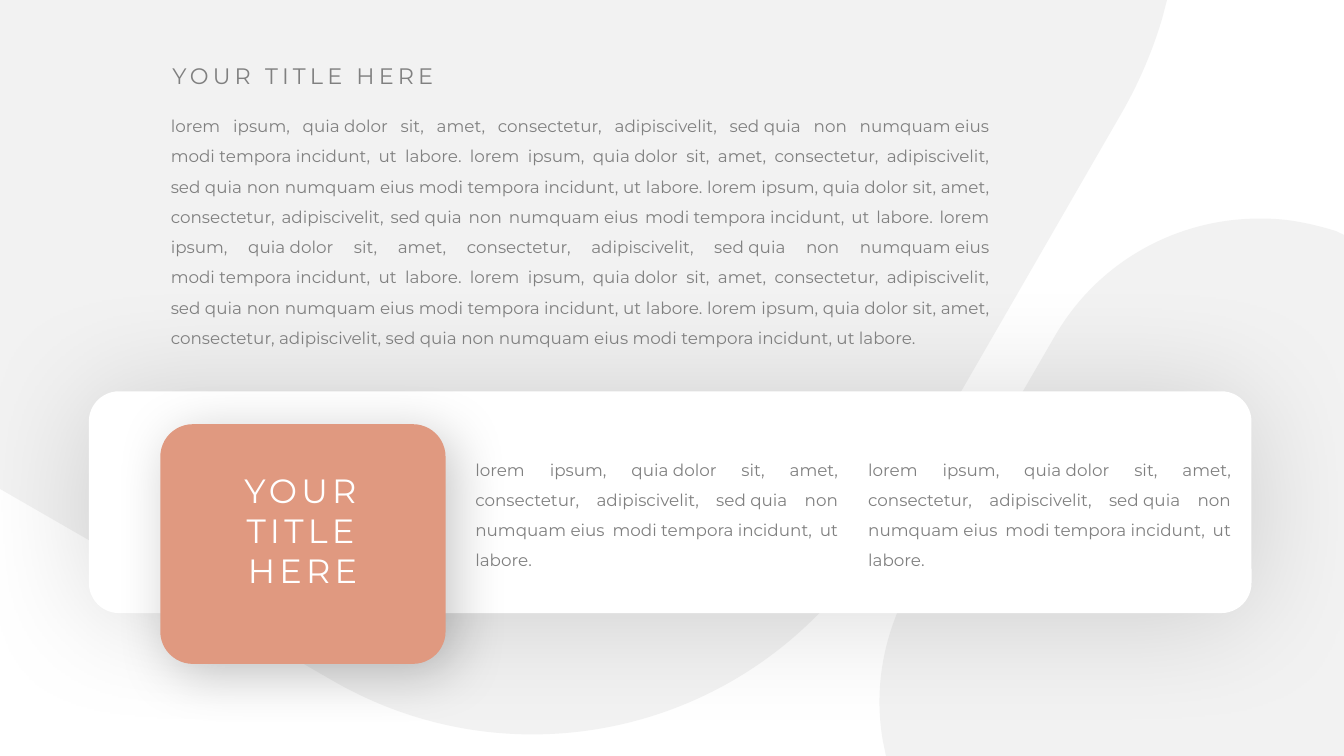
from lxml.etree import SubElement
from pptx import Presentation
from pptx.dml.color import RGBColor
from pptx.enum.shapes import MSO_SHAPE
from pptx.enum.text import MSO_ANCHOR, MSO_AUTO_SIZE, PP_ALIGN
from pptx.oxml.ns import qn
from pptx.util import Cm, Pt

# Content: "_" stands for a space that does not break
TITLE = "YOUR TITLE HERE"
LOREM = ("lorem ipsum, quia_dolor sit, amet, consectetur, adipiscivelit, "
         "sed_quia non numquam_eius modi_tempora_incidunt, ut labore."
         ).replace("_", chr(160))
BODY = " ".join([LOREM] * 6)
NOTES = [LOREM, LOREM]

# Places in cm: left, top, width, height
HEAD_BOX = (4.03, 1.45, 7.21, 0.94)
BODY_BOX = (4.05, 2.54, 21.16, 7.09)
TILE_BOX = (5.34, 11.71, 4.57, 3.33)
NOTE_BOX = (11.73, 11.2, 9.65, 3.25)
NOTE_STEP = 9.9

# Panels: box, fill, shadow (alpha %, blur pt, distance pt, angle)
PANELS = [
    ((2.24, 9.86, 29.3, 5.59), "FFFFFF", (15, 88, 3, 90)),
    ((4.04, 10.69, 7.19, 6.04), "E09980", (22, 39, 9, 45)),
]

# Bottom edge and outline in cm: one point is a line, three are a curve
BLOBS = [
    (19.05, [
        [(31.88, 5.51)],
        [(32.46, 5.51), (33.07, 5.64), (33.66, 5.82)],
        [(33.87, 5.92)], [(33.87, 19.05)], [(22.33, 19.05)], [(22.25, 18.67)],
        [(22.02, 17.37), (22.25, 15.98), (22.96, 14.73)],
        [(26.59, 8.46)],
        [(27.71, 6.53), (29.77, 5.46), (31.88, 5.51)]]),
    (18.49, [
        [(0, 0)], [(29.41, 0)], [(29.29, 0.46)],
        [(29.06, 1.24), (28.73, 2.03), (28.3, 2.79)],
        [(22.15, 13.46)],
        [(19.35, 18.29), (13.21, 19.94), (8.38, 17.15)],
        [(0, 12.32)]]),
]

# Text formats
GREY = "808080"
HEAD = {"size": 16, "color": GREY, "align": PP_ALIGN.CENTER,
        "line": 1, "spc": 300, "wrap": False}
PLAIN = {"size": 12, "color": GREY, "align": PP_ALIGN.JUSTIFY,
         "line": 1.5, "spc": 0, "wrap": True}
TILE = {**HEAD, "size": 24, "color": "FFFFFF", "wrap": True}


def paint(fmt, color):
    if hasattr(fmt, "solid"):
        fmt.solid()
        fmt = fmt.fore_color
    else:
        fmt = fmt.color
    fmt.rgb = RGBColor.from_string(color)


def plain(shape, color):
    paint(shape.fill, color)
    shape.line.fill.background()
    shape.shadow.inherit = False


def draw(shapes, floor, parts):
    """Draw the points as lines, then join each three of a curve."""
    first, *rest = [(Cm(x), Cm(y)) for part in parts for x, y in part]
    pen = shapes.build_freeform(*first, scale=1.0)
    pen.add_line_segments(rest, close=True)
    blob = pen.convert_to_shape()
    track = next(blob._element.iter(qn("a:path")))
    lines = iter(track.findall(qn("a:lnTo")))
    for part in parts[1:]:
        group = [next(lines) for _ in part]
        if len(group) == 3:
            curve = SubElement(track, qn("a:cubicBezTo"))
            group[0].addprevious(curve)
            for line in group:
                curve.append(line[0])
                track.remove(line)
    # End the frame at the curve, not at its control points
    blob.height = Cm(floor) - blob.top
    track.set("h", str(blob.height))
    plain(blob, "F2F2F2")


def shade(shape, alpha, blur, dist, angle):
    glow = SubElement(shape._element.spPr.find(qn("a:effectLst")),
                      qn("a:outerShdw"), blurRad=str(Pt(blur)),
                      dist=str(Pt(dist)), dir=str(angle * 60000),
                      algn="ctr", rotWithShape="0")
    tint = SubElement(glow, qn("a:srgbClr"), val="000000")
    SubElement(tint, qn("a:alpha"), val=str(alpha * 1000))


def write(shape, box, text, look):
    for name, value in zip(("left", "top", "width", "height"), box):
        setattr(shape, name, Cm(value))
    frame = shape.text_frame
    frame.text = text
    para = frame.paragraphs[0]
    run = para.runs[0]
    jobs = [
        (frame, {"word_wrap": look["wrap"], "vertical_anchor": MSO_ANCHOR.TOP,
                 "auto_size": MSO_AUTO_SIZE.SHAPE_TO_FIT_TEXT}),
        (para, {"alignment": look["align"], "line_spacing": look["line"],
                "space_before": Pt(0)}),
        (run.font, {"name": "Montserrat", "size": Pt(look["size"])}),
    ]
    for target, values in jobs:
        for name, value in values.items():
            setattr(target, name, value)
    paint(run.font, look["color"])
    run._r.get_or_add_rPr().set("spc", str(look["spc"]))
    # No bullet and no hanging indent
    props = para._p.get_or_add_pPr()
    for name in ("marL", "indent"):
        props.set(name, "0")
    SubElement(props, qn("a:buNone"))


def main():
    deck = Presentation()
    deck.slide_width, deck.slide_height = Cm(33.87), Cm(19.05)
    slide = deck.slides.add_slide(deck.slide_layouts[1])
    shapes = slide.shapes
    head, body = slide.placeholders

    # Backdrop
    for floor, parts in BLOBS:
        draw(shapes, floor, parts)

    # Card and tile
    for box, color, glow in PANELS:
        panel = shapes.add_shape(MSO_SHAPE.ROUNDED_RECTANGLE, *map(Cm, box))
        panel.adjustments[0] = 0.136
        plain(panel, color)
        shade(panel, *glow)

    # Title and body, brought in front of the backdrop
    for holder, box, text, look in ((body, BODY_BOX, BODY, PLAIN),
                                    (head, HEAD_BOX, TITLE, HEAD)):
        shapes._spTree.append(holder._element)
        write(holder, box, text, look)

    # Notes and tile label
    left, top, *size = NOTE_BOX
    labels = [((left + i * NOTE_STEP, top, *size), note, PLAIN)
              for i, note in enumerate(NOTES)]
    labels.append((TILE_BOX, TITLE, TILE))
    for box, text, look in labels:
        write(shapes.add_textbox(*map(Cm, box)), box, text, look)

    deck.save("out.pptx")


if __name__ == "__main__":
    main()
